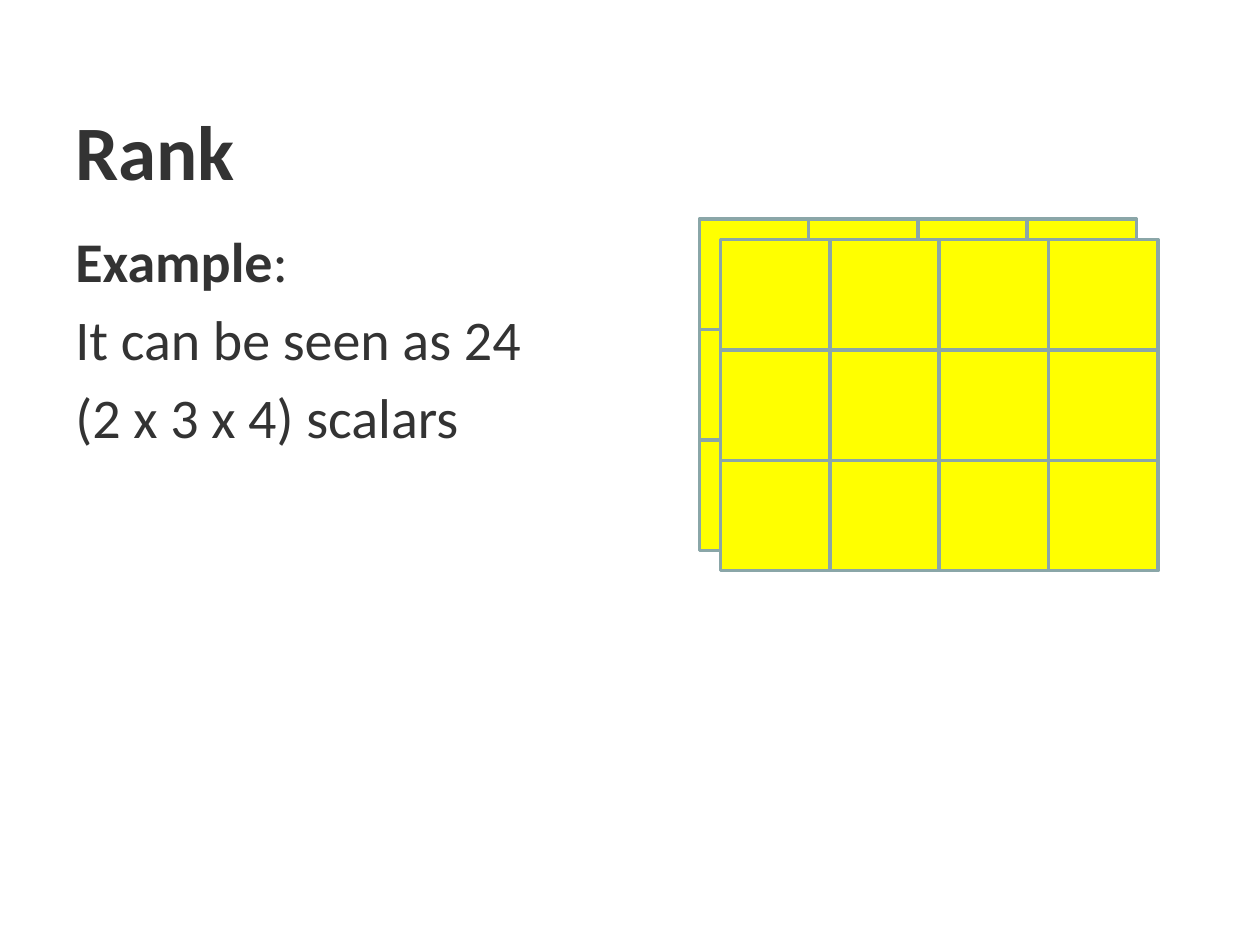
from itertools import product

from pptx import Presentation
from pptx.dml.color import RGBColor
from pptx.enum import shapes, text
from pptx.util import Inches, Pt

COLORS = {"text": "333333", "cell": "FFFF00", "border": "8AA6A8"}
FONT = "Calibri"
ROWS, COLS = 3, 4


def rgb(name):
    return RGBColor.from_string(COLORS[name])


def add_text(s, left, top, width, height, paragraphs, size, space=0):
    """Place paragraphs, each a list of (wording, bold) runs."""
    tf = s.shapes.add_textbox(Inches(left), Inches(top),
                              Inches(width), Inches(height)).text_frame
    tf.word_wrap = True
    tf.vertical_anchor = text.MSO_ANCHOR.TOP
    for i, runs in enumerate(paragraphs):
        p = tf.add_paragraph() if i else tf.paragraphs[0]
        p.space_before = Pt(space if i else 0)
        for wording, bold in runs:
            r = p.add_run()
            r.text = wording
            r.font.name, r.font.size, r.font.bold = FONT, Pt(size), bold
            r.font.color.rgb = rgb("text")


def add_matrix(s, left, top, width, height):
    cell_w, cell_h = width / COLS, height / ROWS
    for row, col in product(range(ROWS), range(COLS)):
        sp = s.shapes.add_shape(
            shapes.MSO_SHAPE.RECTANGLE,
            Inches(left + col * cell_w), Inches(top + row * cell_h),
            Inches(cell_w), Inches(cell_h))
        sp.shadow.inherit = False
        sp.fill.solid()
        sp.fill.fore_color.rgb = rgb("cell")
        sp.line.color.rgb = rgb("border")
        sp.line.width = Pt(2)


def main():
    prs = Presentation()
    prs.slide_width, prs.slide_height = Inches(10), Inches(7.5)
    s = prs.slides.add_slide(prs.slide_layouts[6])
    add_text(s, 0.5, 0.77, 9, 1.25, [[("Rank", True)]], 44)
    add_text(s, 0.5, 1.75, 9, 4.95, [
        [("Example", True), (":", False)],
        [("It can be seen as 24", False)],
        [("(2 x 3 x 4) scalars", False)],
    ], 32, space=6)
    for left, top in ((5.55, 1.74), (5.72, 1.9)):
        add_matrix(s, left, top, 3.47, 2.63)
    prs.save("out.pptx")


if __name__ == "__main__":
    main()
